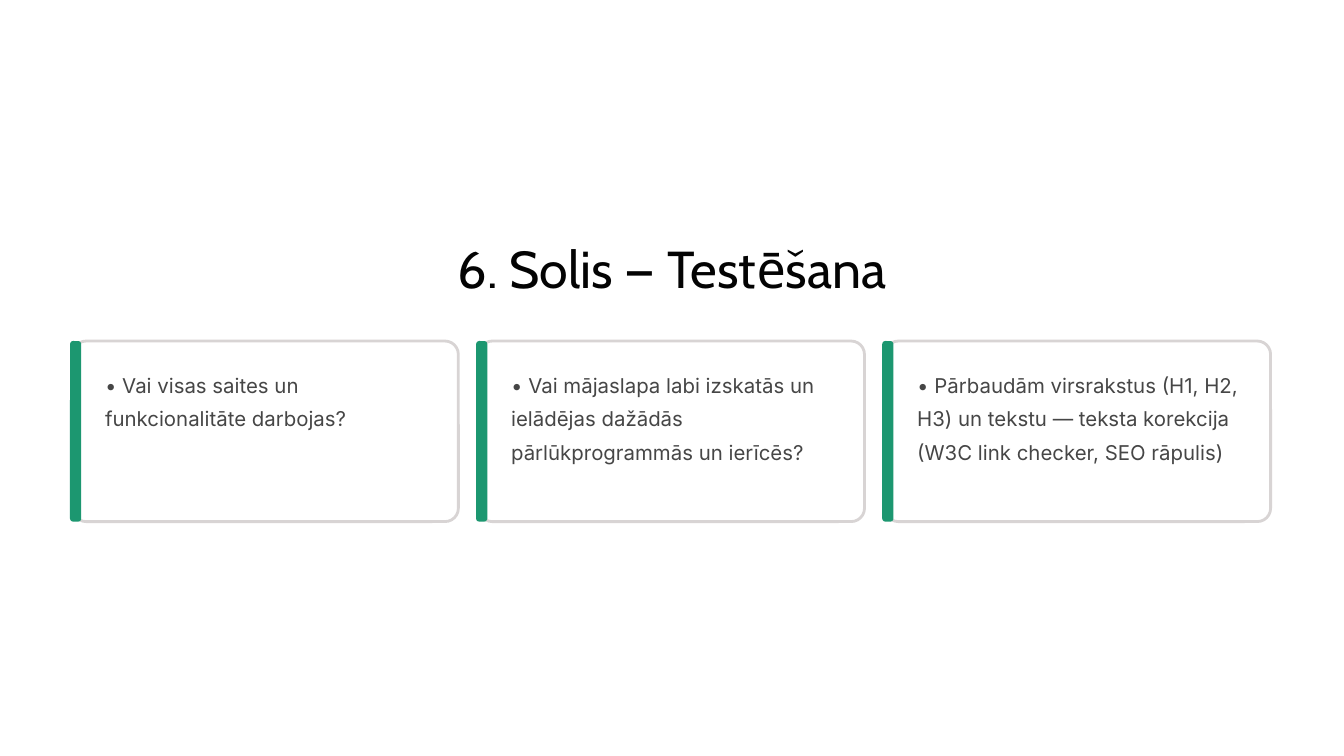
from dataclasses import dataclass

from lxml import etree
from pptx import Presentation
from pptx import util as u
from pptx.dml.color import RGBColor
from pptx.enum import shapes, text
from pptx.oxml import ns

WHITE = RGBColor(0xFF, 0xFF, 0xFF)
INK = RGBColor(0x03, 0x03, 0x03)
GRAY = RGBColor(0x46, 0x46, 0x46)
EDGE = RGBColor(0xD8, 0xD4, 0xD4)
GREEN = RGBColor(0x1C, 0x97, 0x70)

LEFT, TOP, PITCH, TALL = 62.4, 292.3, 348.1, 154.8


@dataclass
class Box:
    left: float
    top: float
    width: float
    height: float


@dataclass
class Style:
    face: str
    size: float
    color: RGBColor
    lead: float
    align: text.PP_ALIGN
    wrap: bool


@dataclass
class Card:
    words: str
    height: float


HEAD = Style("Cabin", 44.5, INK, 55.5, text.PP_ALIGN.CENTER, False)
BODY = Style("Inter", 17.5, GRAY, 28.5, text.PP_ALIGN.LEFT, True)

CARDS = [
    Card("• Vai visas saites un funkcionalitāte darbojas?", 57),
    Card("• Vai mājaslapa labi izskatās un ielādējas dažādās "
         "pārlūkprogrammās un ierīcēs?", 85.5),
    Card("• Pārbaudām virsrakstus (H1, H2, H3) un tekstu — teksta korekcija "
         "(W3C link checker, SEO rāpulis)", 114.5),
]


def panel(slide, box: Box, bend: float, fill: RGBColor):
    shape = slide.shapes.add_shape(
        shapes.MSO_SHAPE.ROUNDED_RECTANGLE, u.Pt(box.left), u.Pt(box.top),
        u.Pt(box.width), u.Pt(box.height))
    shape.adjustments[0] = bend
    shape.shadow.inherit = False
    shape.fill.solid()
    shape.fill.fore_color.rgb = fill
    shape.line.fill.background()
    return shape


def write(slide, holder, box: Box, words: str, style: Style) -> None:
    slide.shapes._spTree.append(holder._element)
    holder.left, holder.top = u.Pt(box.left), u.Pt(box.top)
    holder.width, holder.height = u.Pt(box.width), u.Pt(box.height)
    frame = holder.text_frame
    frame.margin_left = frame.margin_right = 0
    frame.margin_top = frame.margin_bottom = 0
    frame.auto_size = text.MSO_AUTO_SIZE.NONE
    frame.vertical_anchor = text.MSO_ANCHOR.TOP
    frame.word_wrap = style.wrap
    para = frame.paragraphs[0]
    props = para._p.get_or_add_pPr()
    props.set("marL", "0")
    props.set("indent", "0")
    etree.SubElement(props, ns.qn("a:buNone"))
    para.alignment = style.align
    para.line_spacing = u.Pt(style.lead)
    para.space_before = u.Pt(0)
    run = para.add_run()
    run.text = words
    run.font.name = style.face
    run.font.size = u.Pt(style.size)
    run.font.bold = False
    run.font.color.rgb = style.color


def main() -> None:
    deck = Presentation()
    deck.slide_width, deck.slide_height = u.Pt(1152), u.Pt(648)
    slide = deck.slides.add_slide(deck.slide_layouts[4])
    slide.background.fill.solid()
    slide.background.fill.fore_color.rgb = WHITE

    title, *lists = list(slide.placeholders)
    write(slide, title, Box(352.8, 200.9, 446.4, 56.2),
          "6. Solis — Testēšana", HEAD)
    for col, (card, holder) in enumerate(zip(CARDS, lists)):
        left = LEFT + col * PITCH
        frame = panel(slide, Box(left, TOP, 330.5, TALL), 0.074, WHITE)
        frame.line.color.rgb = EDGE
        frame.line.width = u.Pt(2.4)
        panel(slide, Box(left - 2.4, TOP, 9.6, TALL), 0.279, GREEN)
        write(slide, holder, Box(left + 27.6, 312.5, 283, card.height),
              card.words, BODY)
    for spare in lists[len(CARDS):]:
        slide.shapes._spTree.remove(spare._element)

    deck.save("out.pptx")


if __name__ == "__main__":
    main()
